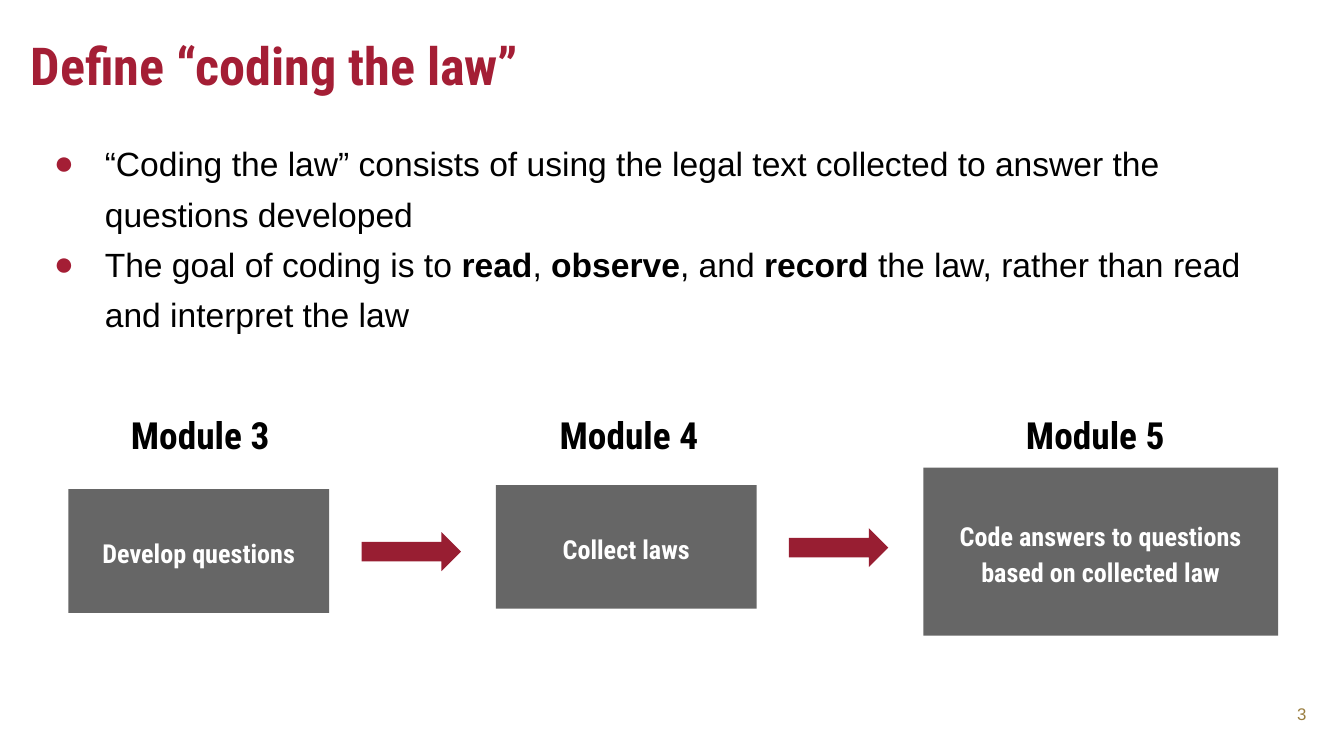
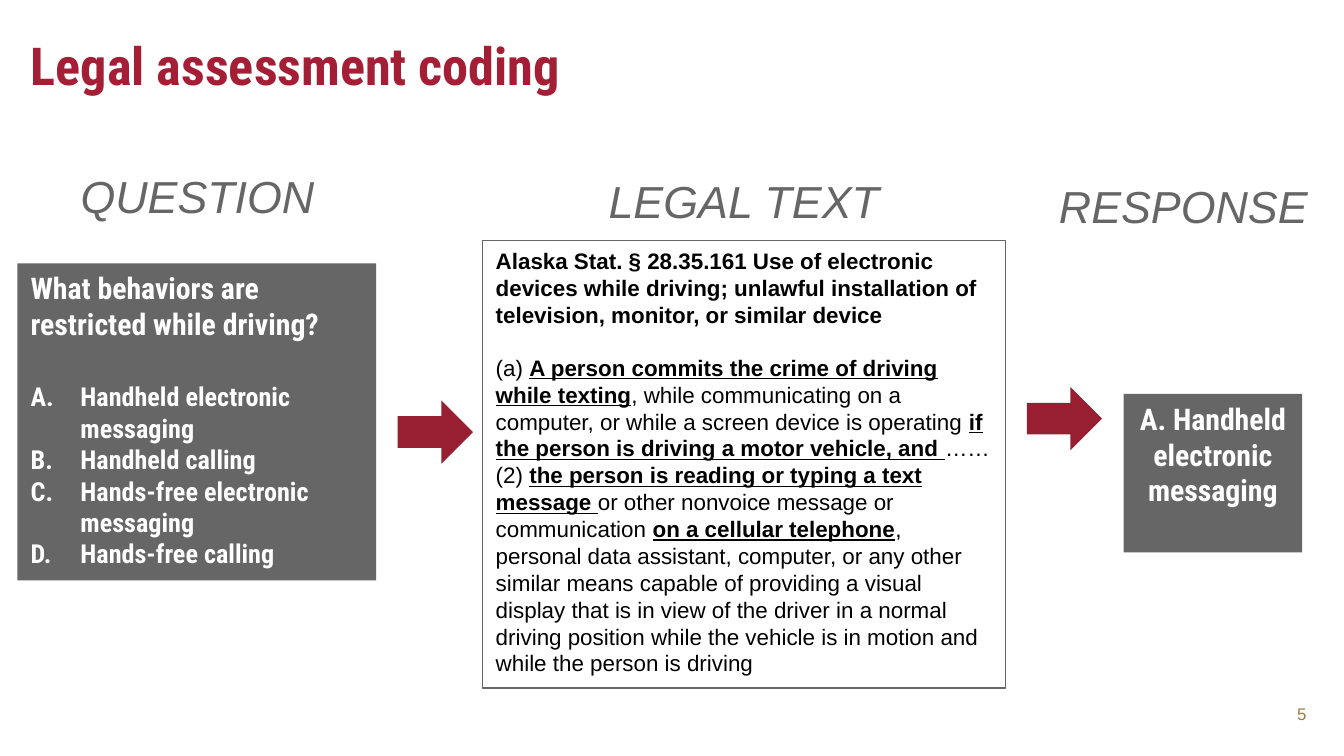
from lxml.etree import SubElement
from pptx import Presentation
from pptx.dml.color import RGBColor
from pptx.enum.shapes import MSO_SHAPE as Shape
from pptx.enum.text import MSO_ANCHOR as Anchor, MSO_AUTO_SIZE as Fit, PP_ALIGN as Align
from pptx.oxml.ns import qn
from pptx.util import Pt

PX = 9144  # 100 px to the inch
WIDE = 1000
INK = {"title": "A41E35", "arrow": "981E32", "gray": "666666",
       "text": "000000", "light": "FFFFFF", "page": "9A7E40"}
HEAD, BODY = "Roboto Condensed", "Arial"


def rgb(name):
    return RGBColor.from_string(INK[name])


def place(shape, box):
    shape.left, shape.top, shape.width, shape.height = (n * PX for n in box)


def inset(frame, side, top):
    frame.margin_left = frame.margin_right = side * PX
    frame.margin_top = frame.margin_bottom = top * PX


def style(para, size, face=BODY, ink="text", bold=False, italic=False, align=Align.LEFT):
    para.alignment = align
    font = para.font
    font.size, font.name = Pt(size), face
    font.bold, font.italic = bold, italic
    font.color.rgb = rgb(ink)


def bullet(para, left, hang, ink, tag, **attrs):
    """Give the paragraph a hanging indent and a coloured bullet or number."""
    props = para._p.get_or_add_pPr()
    props.set("marL", str(left * PX))
    props.set("indent", str(-hang * PX))
    SubElement(SubElement(props, qn("a:buClr")), qn("a:srgbClr"), val=INK[ink])
    SubElement(props, qn("a:buFont"), typeface=BODY)
    SubElement(props, qn(tag), **attrs)


def mark(para, text, line=False):
    """Add runs; the parts between asterisks are bold, and underlined if line."""
    for i, part in enumerate(text.split("*")):
        if part:
            run = para.add_run()
            run.text = part
            if i % 2:
                run.font.bold = True
                if line:
                    run.font.underline = True


def paras(frame, count):
    """Yield the first paragraph of the frame, then new ones up to count."""
    yield frame.paragraphs[0]
    for _ in range(count - 1):
        yield frame.add_paragraph()


def label(slide, box, text, wrap=True, **look):
    shape = slide.shapes.add_textbox(0, 0, 0, 0)
    place(shape, box)
    frame = shape.text_frame
    frame.word_wrap = wrap
    para = frame.paragraphs[0]
    para.text = text
    style(para, **look)
    return frame


def block(slide, box, kind=Shape.RECTANGLE, fill="gray", line=None):
    shape = slide.shapes.add_shape(kind, 0, 0, 0, 0)
    place(shape, box)
    shape.shadow.inherit = False
    if fill:
        shape.fill.solid()
        shape.fill.fore_color.rgb = rgb(fill)
    else:
        shape.fill.background()
    if line:
        shape.line.color.rgb = rgb(line)
        shape.line.width = Pt(0.75)
    else:
        shape.line.fill.background()
    frame = shape.text_frame
    frame.word_wrap = True
    frame.vertical_anchor = Anchor.TOP
    return frame


def arrow(slide, box):
    block(slide, box, Shape.RIGHT_ARROW, "arrow")


def start(deck, layout, title, page):
    """Add a slide with its title and page number."""
    slide = deck.slides.add_slide(deck.slide_layouts[layout])
    head = slide.shapes.title
    place(head, (13, 15, 916, 63))
    frame = head.text_frame
    frame.text = title
    frame.auto_size, frame.vertical_anchor = Fit.NONE, Anchor.TOP
    inset(frame, 10, 10)
    style(frame.paragraphs[0], 28, HEAD, "title", bold=True)
    number = label(slide, (938, 509, 44, 37), page, size=9, ink="page", align=Align.RIGHT)
    number.vertical_anchor = Anchor.BOTTOM
    inset(number, 10, 10)
    return slide


def points(slide, box, items):
    body = slide.placeholders[1]
    place(body, box)
    frame = body.text_frame
    frame.auto_size, frame.vertical_anchor = Fit.NONE, Anchor.TOP
    inset(frame, 10, 10)
    for para, text in zip(paras(frame, len(items)), items):
        bullet(para, 50, 38, "title", "a:buChar", char="●")
        para.line_spacing, para.space_before = 1.25, Pt(0)
        style(para, 18)
        mark(para, text)


def module(slide, box, mid, name, text):
    """Draw a step's box, with its name centred on mid above."""
    frame = block(slide, box)
    frame.vertical_anchor = Anchor.MIDDLE
    para = frame.paragraphs[0]
    para.text = text
    para.line_spacing, para.space_after = 1.15, Pt(10)
    style(para, 14, HEAD, "light", bold=True, align=Align.CENTER)
    label(slide, (mid - 76, 302, 152, 44), name, size=20, face=HEAD,
          bold=True, align=Align.CENTER)


def define(deck):
    slide = start(deck, 1, "Define “coding the law”", "3")
    points(slide, (18, 89, 932, 396), [
        "“Coding the law” consists of using the legal text collected to answer "
        "the questions developed",
        "The goal of coding is to *read*, *observe*, and *record *the law, "
        "rather than read and interpret the law"])
    steps = [("Develop questions", 364, 194, 92, 149),
             ("Collect laws", 361, 194, 92, 468),
             ("Code answers to questions based on collected law", 348, 264, 125, 815)]
    for i, (text, top, wide, high, mid) in enumerate(steps):
        left = 51 + 318 * i
        module(slide, (left, top, wide, high), mid, f"Module {i + 3}", text)
        if i < len(steps) - 1:
            arrow(slide, (left + 218, top + 32, 74, 29))


def question(slide, box, ask, options):
    frame = block(slide, box)
    first, *rest = paras(frame, len(options) + 1)
    first.text = ask
    first.space_after = Pt(21)
    style(first, 16, HEAD, "light", bold=True)
    for para, text in zip(rest, options):
        bullet(para, 37, 37, "light", "a:buAutoNum", type="alphaUcPeriod")
        para.text = text
        style(para, 14, HEAD, "light", bold=True)


def statute(slide, box, name, clauses):
    frame = block(slide, box, fill=None, line="gray")
    first, *rest = paras(frame, len(clauses) + 1)
    first.text = name
    first.space_after = Pt(14)
    style(first, 12, bold=True)
    for para, text in zip(rest, clauses):
        style(para, 12)
        mark(para, text, line=True)


def answer(slide, box, text):
    para = block(slide, box).paragraphs[0]
    para.text = text
    style(para, 16, HEAD, "light", bold=True, align=Align.CENTER)


def assess(deck):
    slide = start(deck, 5, "Legal assessment coding", "5")
    question(slide, (13, 196, 267, 236), "What behaviors are restricted while driving?", [
        "Handheld electronic messaging", "Handheld calling",
        "Hands-free electronic messaging", "Hands-free calling"])
    statute(
        slide, (359, 179, 389, 333),
        "Alaska Stat. § 28.35.161 Use of electronic devices while driving; "
        "unlawful installation of television, monitor, or similar device",
        ["(a) *A person commits the crime of driving while texting*, while "
         "communicating on a computer, or while a screen device is operating "
         "*if the person is driving a motor vehicle, and *……",
         "(2) *the person is reading or typing a text message *or other nonvoice "
         "message or communication *on a cellular telephone*, personal data "
         "assistant, computer, or any other similar means capable of providing a "
         "visual display that is in view of the driver in a normal driving position "
         "while the vehicle is in motion and while the person is driving"])
    answer(slide, (836, 293, 133, 118), "A. Handheld electronic messaging")
    for text, left, top, wide in [("QUESTION", 49, 121, 196),
                                  ("LEGAL TEXT", 442, 124, 223),
                                  ("RESPONSE", 777, 128, 207)]:
        label(slide, (left, top, wide, 50), text, wrap=False, size=24,
              ink="gray", italic=True, align=Align.CENTER)
    for left, top in [(296, 298), (764, 288)]:
        arrow(slide, (left, top, 56, 47))


def main():
    deck = Presentation()
    deck.slide_width = WIDE * PX
    deck.slide_height = WIDE * PX * 9 // 16
    define(deck)
    assess(deck)
    deck.save("out.pptx")


if __name__ == "__main__":
    main()
